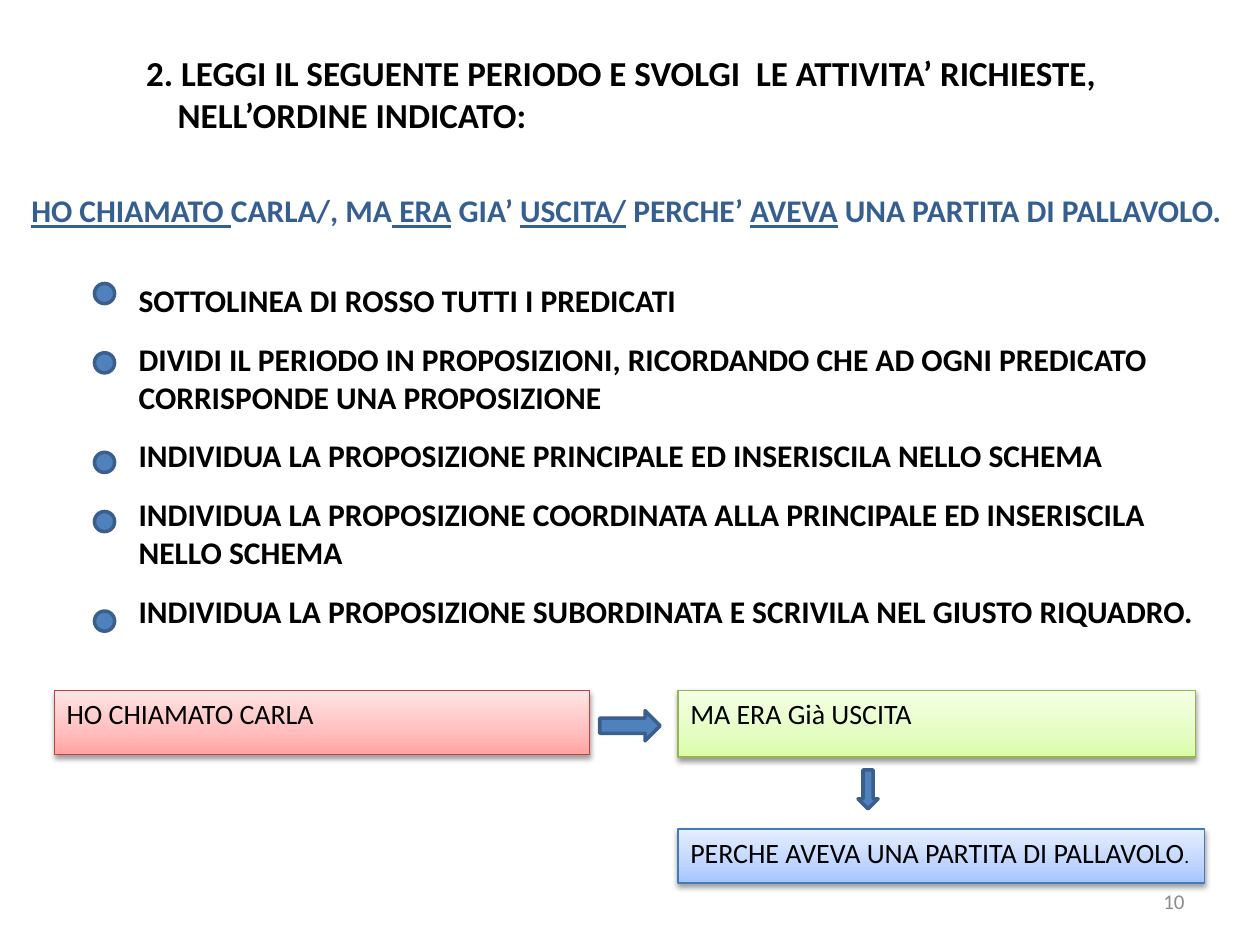
from copy import deepcopy
from lxml import etree
from pptx import Presentation
from pptx.dml.color import RGBColor
from pptx.enum.shapes import MSO_SHAPE
from pptx.enum.text import MSO_ANCHOR, MSO_AUTO_SIZE, PP_ALIGN
from pptx.oxml.ns import qn
from pptx.util import Inches, Pt

DOT = MSO_SHAPE.FLOWCHART_CONNECTOR
RECT = MSO_SHAPE.RECTANGLE
RIGHT, DOWN = MSO_SHAPE.RIGHT_ARROW, MSO_SHAPE.DOWN_ARROW
MIDDLE, TOP = MSO_ANCHOR.MIDDLE, MSO_ANCHOR.TOP

BLACK = RGBColor(0x00, 0x00, 0x00)
NAVY = RGBColor(0x36, 0x5F, 0x91)
GRAY = RGBColor(0x8C, 0x8C, 0x8C)
BLUE = RGBColor(0x4F, 0x81, 0xBD)
EDGE = RGBColor(0x3A, 0x5F, 0x8C)
REDS = [RGBColor(0xFF, 0xA2, 0xA1), RGBColor(0xFF, 0xBE, 0xBD),
        RGBColor(0xFF, 0xE5, 0xE5), RGBColor(0xBC, 0x45, 0x42)]
GREENS = [RGBColor(0xDA, 0xFD, 0xA7), RGBColor(0xE4, 0xFD, 0xC2),
          RGBColor(0xF5, 0xFF, 0xE6), RGBColor(0x94, 0xB6, 0x4E)]
BLUES = [RGBColor(0xA3, 0xC4, 0xFF), RGBColor(0xBF, 0xD5, 0xFF),
         RGBColor(0xE5, 0xEE, 0xFF), RGBColor(0x45, 0x79, 0xB8)]

prs = Presentation()
prs.slide_width, prs.slide_height = Inches(10), Inches(7.5)
COL, ROW = prs.slide_width / 100, prs.slide_height / 75
slide = prs.slides.add_slide(prs.slide_layouts[1])
shapes = slide.shapes


def area(left, top, wide, high):
    """Turn grid columns and rows into lengths."""
    return int(left * COL), int(top * ROW), int(wide * COL), int(high * ROW)


def style(frame, size, color, bold=False, anchor=MIDDLE, align=PP_ALIGN.LEFT):
    """Format every paragraph and run of a text frame."""
    frame.word_wrap = True
    frame.auto_size = MSO_AUTO_SIZE.NONE
    frame.vertical_anchor = anchor
    for para in frame.paragraphs:
        para.alignment = align
        for run in para.runs:
            font = run.font
            font.name, font.size, font.bold = "Calibri", Pt(size), bold
            font.color.rgb = color


# Title, with its second line indented
title = shapes.title
title.left, title.top, title.width, title.height = area(10.6, 3.6, 78.7, 7.7)
title.text_frame.text = ("2. LEGGI IL SEGUENTE PERIODO E SVOLGI  LE ATTIVITA’ RICHIESTE,\n"
                         "NELL’ORDINE INDICATO:")
style(title.text_frame, 20, BLACK, True)
title.text_frame.paragraphs[1]._p.get_or_add_pPr().set("marL", str(Inches(0.25)))

# Sentence to analyse: every other part is underlined
parts = ["HO CHIAMATO ", "CARLA/, MA", " ERA", " GIA’ ", "USCITA/",
         " PERCHE’ ", "AVEVA", " UNA PARTITA DI PALLAVOLO."]
frame = shapes.add_textbox(*area(1.5, 14.7, 97.3, 4)).text_frame
for i, part in enumerate(parts):
    run = frame.paragraphs[0].add_run()
    run.text = part
    run.font.underline = i % 2 == 0
style(frame, 18, NAVY, True)

# List of tasks
tasks = [
    "SOTTOLINEA DI ROSSO TUTTI I PREDICATI",
    "DIVIDI IL PERIODO IN PROPOSIZIONI, RICORDANDO CHE AD OGNI PREDICATO\v"
    "CORRISPONDE UNA PROPOSIZIONE",
    "INDIVIDUA LA PROPOSIZIONE PRINCIPALE ED INSERISCILA NELLO SCHEMA",
    "INDIVIDUA LA PROPOSIZIONE COORDINATA ALLA PRINCIPALE ED INSERISCILA\v"
    "NELLO SCHEMA",
    "INDIVIDUA LA PROPOSIZIONE SUBORDINATA E SCRIVILA NEL GIUSTO RIQUADRO.",
]
body = slide.placeholders[1]
body.left, body.top, body.width, body.height = area(10, 21.8, 86.5, 29.1)
body.text_frame.text = "\n".join(tasks)
style(body.text_frame, 18, BLACK, True, TOP)
for i, para in enumerate(body.text_frame.paragraphs):
    para.space_before = Pt(12 if i else 0)
    props = para._p.get_or_add_pPr()
    props.set("marL", "0")
    props.set("indent", "0")
    etree.SubElement(props, qn("a:buNone"))

# Dots beside the tasks and arrows between the boxes
marks = [(DOT, 7.5, top, 1.6, 1.6) for top in (22.5, 28, 35.9, 40.6, 48.5)]
marks += [(RIGHT, 47.6, 56.4, 4.8, 2.4), (DOWN, 68.1, 61.1, 1.6, 3.1)]
for kind, *place in marks:
    mark = shapes.add_shape(kind, *area(*place))
    mark.shadow.inherit = False
    mark.fill.solid()
    mark.fill.fore_color.rgb = BLUE
    mark.line.color.rgb = EDGE
    mark.line.width = Pt(2)

# Scheme of clauses
boxes = [
    ("HO CHIAMATO CARLA", REDS, (4.3, 54.8, 42.5, 5.1)),
    ("MA ERA Già USCITA", GREENS, (53.8, 54.8, 41.1, 5.3)),
    ("PERCHE AVEVA UNA PARTITA DI PALLAVOLO", BLUES, (53.8, 65.8, 41.8, 4.3)),
]
for text, tones, place in boxes:
    box = shapes.add_shape(RECT, *area(*place))
    box.fill.gradient()
    box.fill.gradient_angle = 90
    stops = box._element.spPr.find(".//" + qn("a:gsLst"))
    stops.insert(1, deepcopy(stops[0]))
    for stop, tone, pos in zip(box.fill.gradient_stops, tones, (0, 0.35, 1)):
        stop.color.rgb = tone
        stop.position = pos
    box.line.color.rgb = tones[3]
    box.line.width = Pt(0.75)
    box.shadow.inherit = False
    glow = etree.SubElement(box._element.spPr.find(qn("a:effectLst")), qn("a:outerShdw"),
                            blurRad="40000", dist=str(Pt(1.6)), dir="5400000", rotWithShape="0")
    shade = etree.SubElement(glow, qn("a:srgbClr"), val=str(BLACK))
    etree.SubElement(shade, qn("a:alpha"), val="38000")
    box.text_frame.text = text
    style(box.text_frame, 16, BLACK, anchor=TOP)
    box.text_frame.paragraphs[0].space_after = Pt(10)

# Small full stop that ends the last clause
dot = box.text_frame.paragraphs[0].add_run()
dot.text = "."
dot.font.name, dot.font.size = "Calibri", Pt(11)
dot.font.color.rgb = BLACK

# Page number
page = shapes.add_textbox(*area(71.7, 69.5, 23.3, 4)).text_frame
page.text = "10"
style(page, 12, GRAY, align=PP_ALIGN.RIGHT)

prs.save("out.pptx")
